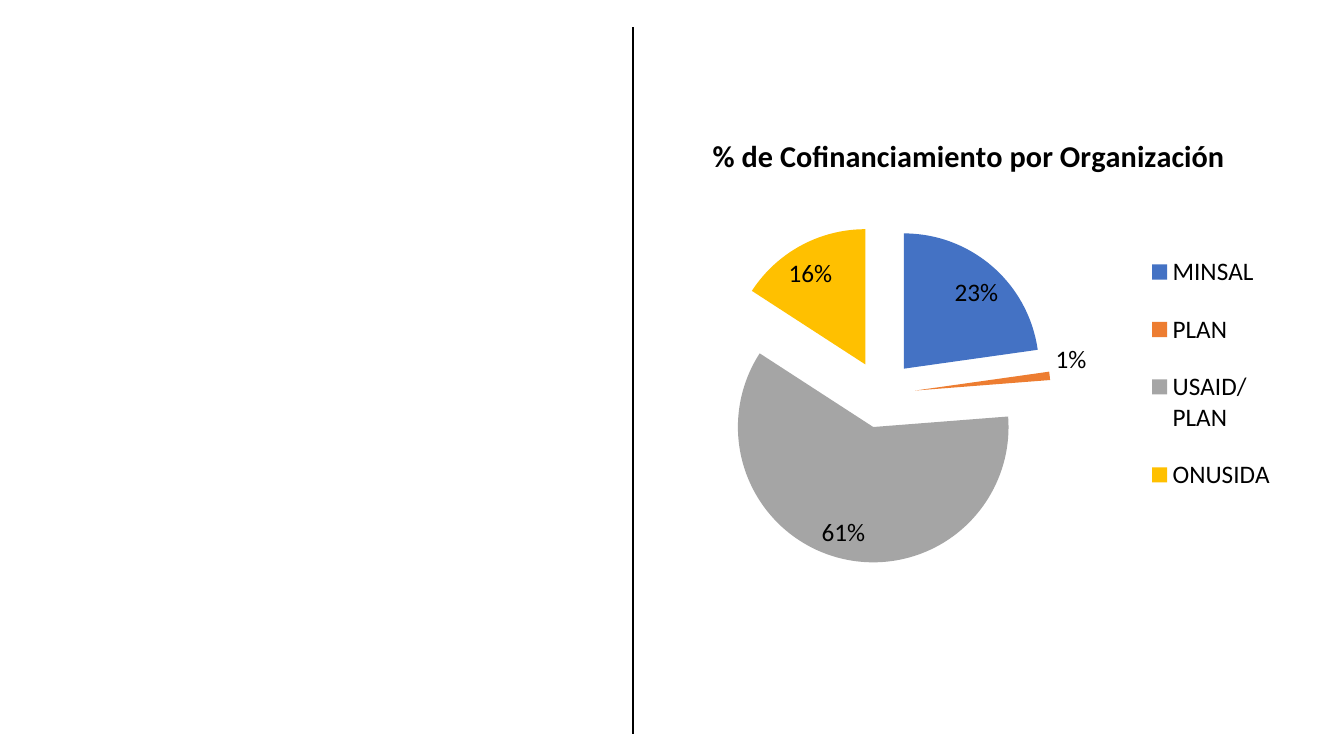
from lxml import etree
from pptx import Presentation
from pptx.chart.data import CategoryChartData
from pptx.dml.color import RGBColor
from pptx.enum.chart import XL_CHART_TYPE, XL_LABEL_POSITION, XL_LEGEND_POSITION
from pptx.enum.shapes import MSO_CONNECTOR
from pptx.oxml import parse_xml
from pptx.oxml.ns import nsdecls, qn
from pptx.util import Cm, Pt

PIE = XL_CHART_TYPE.PIE
BEST_FIT = XL_LABEL_POSITION.BEST_FIT
RIGHT = XL_LEGEND_POSITION.RIGHT
STRAIGHT = MSO_CONNECTOR.STRAIGHT

FONT = "Calibri"
BLACK = "000000"
SHARES = [
    ("MINSAL", 23, "4472C4"),
    ("PLAN", 1, "ED7D31"),
    ("USAID/ PLAN", 61, "A5A5A5"),
    ("ONUSIDA", 16, "FFC000"),
]


def rgb(color):
    return RGBColor.from_string(color)


def style_font(font, size, bold=False):
    font.name = FONT
    font.size = Pt(size)
    font.bold = bold
    font.color.rgb = rgb(BLACK)


def manual_layout(x, y, w, h, inner=False):
    target = '<c:layoutTarget val="inner"/>' if inner else ""
    sizes = "".join(f'<c:{k} val="{v}"/>' for k, v in zip("xywh", (x, y, w, h)))
    return parse_xml(
        f'<c:layout {nsdecls("c")}><c:manualLayout>{target}'
        f'<c:xMode val="edge"/><c:yMode val="edge"/>{sizes}'
        "</c:manualLayout></c:layout>"
    )


def set_layout(parent, layout, index):
    for old in parent.findall(qn("c:layout")):
        parent.remove(old)
    parent.insert(index, layout)


def add_divider(s, x, top, bottom):
    line = s.shapes.add_connector(STRAIGHT, x, top, x, bottom)
    line.line.color.rgb = rgb(BLACK)
    line.line.width = Pt(1.5)
    etree.SubElement(line._element.spPr, qn("a:effectLst"))


def add_cofinancing_pie(s, left, top, width, height):
    data = CategoryChartData()
    data.categories = [name for name, _, _ in SHARES]
    data.add_series("Series 1", [value for _, value, _ in SHARES])
    chart = s.shapes.add_chart(PIE, left, top, width, height, data).chart
    style_font(chart.font, 18)

    tf = chart.chart_title.text_frame
    tf.text = "% de Cofinanciamiento por Organización"
    style_font(tf.paragraphs[0].runs[0].font, 21.6, True)
    chart.chart_title.include_in_layout = False

    chart.has_legend = True
    legend = chart.legend
    legend.position = RIGHT
    legend.include_in_layout = False
    style_font(legend.font, 18)
    set_layout(legend._element, manual_layout(0.76, 0.25, 0.2, 0.62), 1)

    plot = chart.plots[0]
    plot.vary_by_categories = True
    plot_area = chart._chartSpace.chart.plotArea
    set_layout(plot_area, manual_layout(0.11, 0.24, 0.52, 0.73, True), 0)

    series = plot.series[0]
    for i, (_, _, color) in enumerate(SHARES):
        fill = series.points[i].format.fill
        fill.solid()
        fill.fore_color.rgb = rgb(color)
    explosion = parse_xml(f'<c:explosion {nsdecls("c")} val="25"/>')
    series._element.find(qn("c:dPt")).addprevious(explosion)

    labels = series.data_labels
    labels.show_value = True
    labels.number_format = '0"%"'
    labels.number_format_is_linked = False
    labels.position = BEST_FIT
    style_font(labels.font, 18)


def main():
    prs = Presentation()
    prs.slide_width, prs.slide_height = Cm(33.87), Cm(19.05)
    s = prs.slides.add_slide(prs.slide_layouts[6])
    middle = Cm(15.95)
    add_cofinancing_pie(s, middle, Cm(2.87), Cm(16.94), Cm(11.68))
    add_divider(s, middle, Cm(0.69), Cm(18.49))
    prs.save("out.pptx")


if __name__ == "__main__":
    main()
